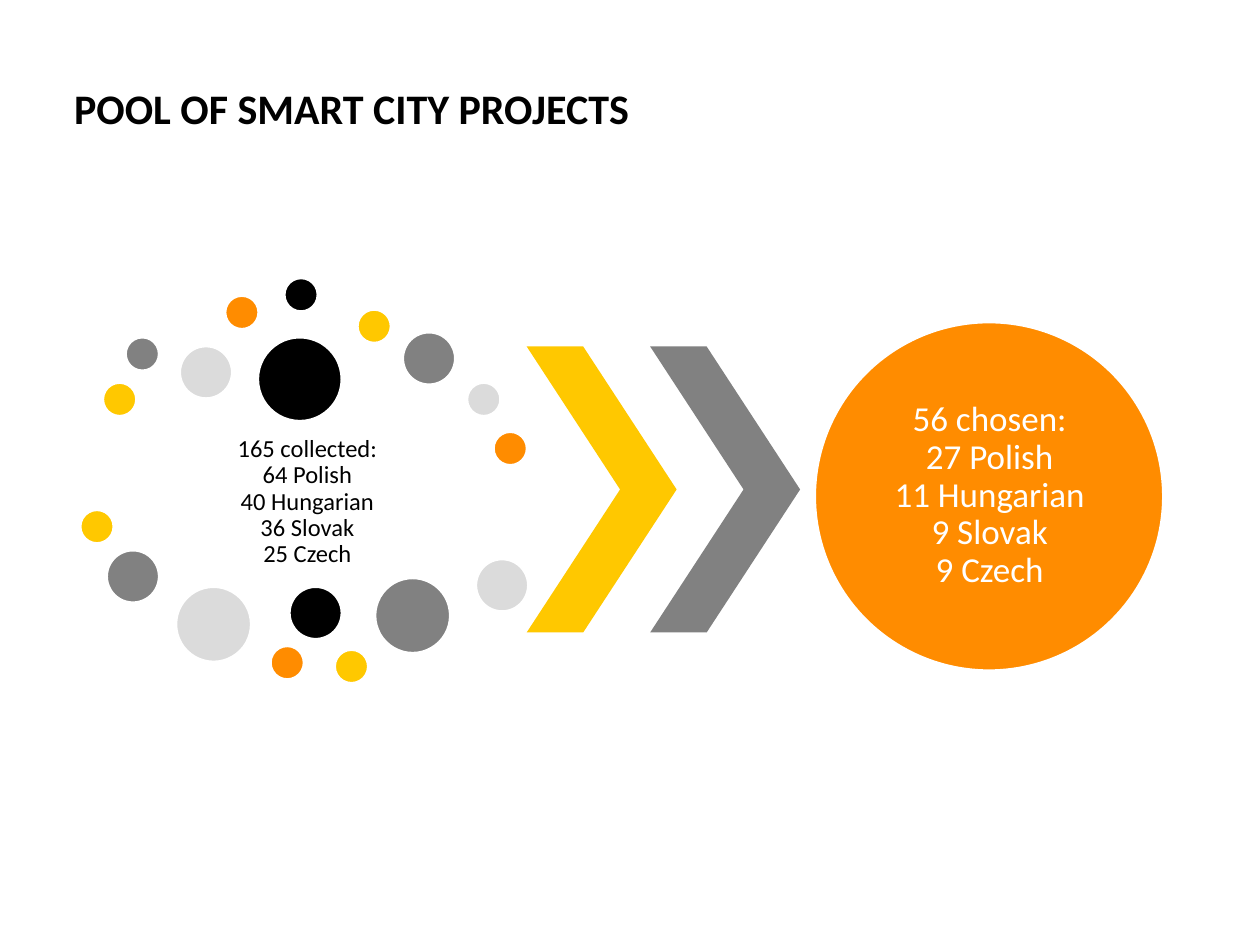
from copy import deepcopy

from pptx import Presentation
from pptx.dml.color import RGBColor
from pptx.enum.shapes import MSO_SHAPE
from pptx.enum.text import MSO_ANCHOR, PP_ALIGN
from pptx.oxml.ns import qn
from pptx.util import Inches, Pt

YELLOW = RGBColor(0xFF, 0xC8, 0x00)
ORANGE = RGBColor(0xFF, 0x8C, 0x00)
GRAY = RGBColor(0x81, 0x81, 0x81)
LIGHT = RGBColor(0xDB, 0xDB, 0xDB)
BLACK = RGBColor(0x00, 0x00, 0x00)
WHITE = RGBColor(0xFF, 0xFF, 0xFF)

TITLE = "POOL OF SMART CITY PROJECTS"
COLLECTED = ["165 collected:", "64 Polish", "40 Hungarian", "36 Slovak", "25 Czech"]
CHOSEN = ["56 chosen:", "27 Polish", "11 Hungarian", "9 Slovak", "9 Czech"]

SMALL, MEDIUM, LARGE, HUGE, RESULT = 0.26, 0.41, 0.59, 0.66, 2.76
CIRCLES = [
    (0.82, 3.04, SMALL, YELLOW),
    (1.00, 2.68, SMALL, GRAY),
    (1.43, 2.75, MEDIUM, LIGHT),
    (1.79, 2.35, SMALL, ORANGE),
    (2.26, 2.21, SMALL, BLACK),
    (2.84, 2.46, SMALL, YELLOW),
    (3.20, 2.64, MEDIUM, GRAY),
    (3.71, 3.04, SMALL, LIGHT),
    (3.92, 3.43, SMALL, ORANGE),
    (2.05, 2.68, HUGE, BLACK),
    (0.64, 4.05, SMALL, YELLOW),
    (0.85, 4.37, MEDIUM, GRAY),
    (1.40, 4.66, LARGE, LIGHT),
    (2.15, 5.13, SMALL, ORANGE),
    (2.30, 4.66, MEDIUM, BLACK),
    (2.66, 5.16, SMALL, YELLOW),
    (2.98, 4.59, LARGE, GRAY),
    (3.78, 4.44, MEDIUM, LIGHT),
    (6.47, 2.56, RESULT, ORANGE),
]
CHEVRONS = [(4.18, YELLOW), (5.16, GRAY)]


def add_shape(slide, kind, box, color):
    sp = slide.shapes.add_shape(kind, *map(Inches, box))
    sp.shadow.inherit = False
    sp.fill.solid()
    sp.fill.fore_color.rgb = color
    return sp


def add_circle(slide, left, top, size, color):
    sp = add_shape(slide, MSO_SHAPE.OVAL, (left, top, size, size), color)
    sp.line.color.rgb = WHITE
    sp.line.width = Pt(1)


def add_chevron(slide, left, color):
    sp = add_shape(slide, MSO_SHAPE.CHEVRON, (left, 2.75, 1.19, 2.27), color)
    sp.adjustments[0] = 0.623
    sp.line.fill.background()


def add_text(slide, box, lines, size, color, frame, para, bold=False):
    tf = slide.shapes.add_textbox(*map(Inches, box)).text_frame
    tf.word_wrap = True
    for name, value in frame.items():
        setattr(tf, name, value)
    p = tf.paragraphs[0]
    for name, value in para.items():
        setattr(p, name, value)
    p.text = "\v".join(lines)
    for r in p.runs:
        for name, value in {"name": "Calibri", "size": Pt(size), "bold": bold}.items():
            setattr(r.font, name, value)
        r.font.color.rgb = color
    for br in p._p.findall(qn("a:br")):
        br.append(deepcopy(p.runs[0]._r.rPr))


def centered(inset):
    sides = ("left", "top", "right", "bottom")
    margins = {f"margin_{side}": Inches(inset) for side in sides}
    return {"vertical_anchor": MSO_ANCHOR.MIDDLE, **margins}


def main():
    prs = Presentation()
    prs.slide_width, prs.slide_height = Inches(10), Inches(7.5)
    slide = prs.slides.add_slide(prs.slide_layouts[6])
    para = {"alignment": PP_ALIGN.CENTER, "line_spacing": 0.9}

    add_text(slide, (0.49, 0.55, 9.24, 0.51), [TITLE], 24, BLACK,
             {}, {"line_spacing": 1.13}, bold=True)
    add_text(slide, (0.82, 3.45, 3.24, 1.07), COLLECTED, 14, BLACK, centered(0.02), para)
    for circle in CIRCLES:
        add_circle(slide, *circle)
    for chevron in CHEVRONS:
        add_chevron(slide, *chevron)
    add_text(slide, (6.88, 2.96, 1.95, 1.95), CHOSEN, 20, WHITE, centered(0), para)
    prs.save("out.pptx")


if __name__ == "__main__":
    main()
